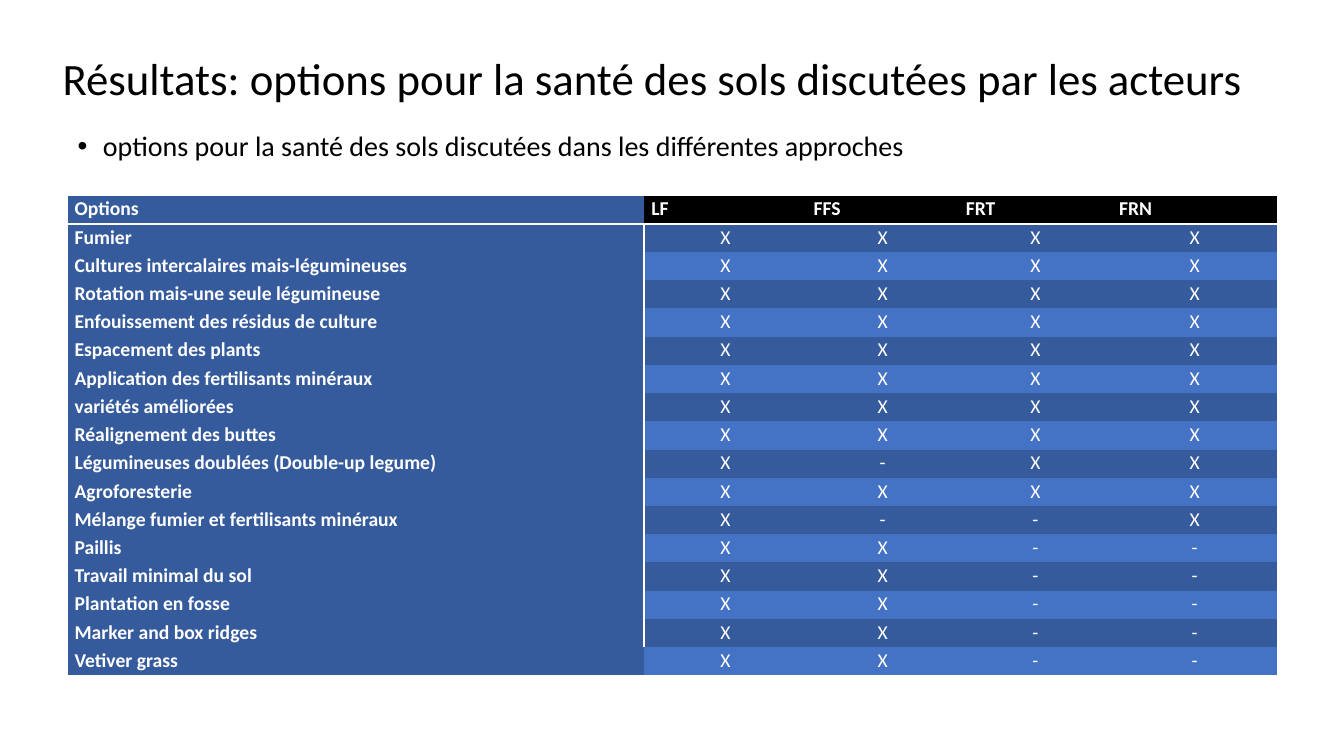
"""Builds the slide on soil health options discussed by the actors."""
from dataclasses import dataclass

from lxml import etree
from pptx import Presentation
from pptx.dml.color import RGBColor
from pptx.enum.text import MSO_ANCHOR, MSO_AUTO_SIZE, PP_ALIGN
from pptx.oxml.ns import qn
from pptx.util import Pt

LEFT, CENTER = PP_ALIGN.LEFT, PP_ALIGN.CENTER
TOP, MIDDLE = MSO_ANCHOR.TOP, MSO_ANCHOR.MIDDLE
NO_AUTOFIT = MSO_AUTO_SIZE.NONE
EMU_PER_PX = 9144
PLAIN_TABLE = "{2D5ABB26-0587-4C30-8999-92F81FD0307C}"

COLUMN_WIDTHS = [572, 161, 151, 152, 164]
ROW_HEIGHT = 28
APPROACHES = ["Options", "LF", "FFS", "FRT", "FRN"]
OPTIONS = [
    ("Fumier", "XXXX"),
    ("Cultures intercalaires mais-légumineuses", "XXXX"),
    ("Rotation mais-une seule légumineuse", "XXXX"),
    ("Enfouissement des résidus de culture", "XXXX"),
    ("Espacement des plants", "XXXX"),
    ("Application des fertilisants minéraux", "XXXX"),
    ("variétés améliorées", "XXXX"),
    ("Réalignement des buttes", "XXXX"),
    ("Légumineuses doublées (Double-up legume)", "X-XX"),
    ("Agroforesterie", "XXXX"),
    ("Mélange fumier et fertilisants minéraux", "X--X"),
    ("Paillis", "XX--"),
    ("Travail minimal du sol", "XX--"),
    ("Plantation en fosse", "XX--"),
    ("Marker and box ridges", "XX--"),
    ("Vetiver grass", "XX--"),
]


@dataclass(frozen=True)
class Theme:
    """Colours and type sizes of the slide."""
    font: str = "Calibri"
    ink: str = "000000"
    paper: str = "FFFFFF"
    dark_band: str = "365B9D"
    light_band: str = "4472C4"
    title_size: int = 32
    list_size: int = 20
    table_size: int = 14
    rule_width: int = 2


def px(length):
    """Turns px into EMU."""
    return length * EMU_PER_PX


def apply(target, values):
    """Sets each named attribute of the target."""
    for name, value in values.items():
        setattr(target, name, value)


class SlideBuilder:
    """Holds the theme and the current slide."""

    def __init__(self, deck, theme):
        self.theme = theme
        self.slide = deck.slides.add_slide(deck.slide_layouts[1])

    def paragraph(self, frame, text, size, color, bold=False, **layout):
        """Fills the first paragraph of a frame and returns it."""
        paragraph = frame.paragraphs[0]
        apply(paragraph, layout)
        run = paragraph.add_run()
        run.text = text
        apply(run.font, {"name": self.theme.font, "size": Pt(size), "bold": bold})
        run.font.color.rgb = RGBColor.from_string(color)
        return paragraph

    def placeholder(self, index, box, text, size, anchor, **layout):
        """Places and fills a template placeholder."""
        holder = self.slide.placeholders[index]
        apply(holder, dict(zip(("left", "top", "width", "height"), map(px, box))))
        apply(holder.text_frame, {"auto_size": NO_AUTOFIT, "word_wrap": True,
                                  "vertical_anchor": anchor})
        return self.paragraph(holder.text_frame, text, size, self.theme.ink,
                              alignment=LEFT, line_spacing=0.9, **layout)

    def title(self, box, text):
        """Fills the title."""
        self.placeholder(0, box, text, self.theme.title_size, MIDDLE)

    def bullet(self, box, text):
        """Fills the body with one bulleted line."""
        point = self.placeholder(1, box, text, self.theme.list_size, TOP,
                                 space_before=Pt(10))
        properties = point._p.get_or_add_pPr()
        properties.set("marL", str(px(25)))
        properties.set("indent", str(px(-25)))
        etree.SubElement(properties, qn("a:buChar"), char="•")

    def border(self, cell, side):
        """Draws a rule on one side of a cell."""
        line = etree.Element(qn(f"a:{side}"), w=str(int(Pt(self.theme.rule_width))))
        fill = etree.SubElement(line, qn("a:solidFill"))
        etree.SubElement(fill, qn("a:srgbClr"), val=self.theme.paper)
        cell._tc.get_or_add_tcPr().insert(0, line)

    def cell(self, cell, text, fill, bold, alignment):
        """Fills one table cell."""
        apply(cell, {"margin_left": px(7), "margin_right": px(7),
                     "margin_top": 0, "margin_bottom": 0, "vertical_anchor": TOP})
        cell.fill.solid()
        cell.fill.fore_color.rgb = RGBColor.from_string(fill)
        self.paragraph(cell.text_frame, text, self.theme.table_size, self.theme.paper,
                       bold, alignment=alignment, line_spacing=1.07, space_after=Pt(8))

    def table(self, left, top, rows):
        """Adds the banded table with a header row and a label column."""
        table = self.slide.shapes.add_table(
            len(rows), len(COLUMN_WIDTHS), px(left), px(top),
            px(sum(COLUMN_WIDTHS)), px(ROW_HEIGHT * len(rows))).table
        apply(table, {"first_row": False, "horz_banding": False})
        table._tbl.tblPr.find(qn("a:tableStyleId")).text = PLAIN_TABLE
        for column, width in zip(table.columns, COLUMN_WIDTHS):
            column.width = px(width)
        bands = (self.theme.light_band, self.theme.dark_band)
        for r, row in enumerate(rows):
            table.rows[r].height = px(ROW_HEIGHT)
            for c, text in enumerate(row):
                header, label = r == 0, c == 0
                if label:
                    fill = self.theme.dark_band
                else:
                    fill = self.theme.ink if header else bands[r % 2]
                cell = table.cell(r, c)
                self.cell(cell, text, fill, header or label,
                          LEFT if header or label else CENTER)
                if header:
                    self.border(cell, "lnB")
                elif label and r < len(rows) - 1:
                    self.border(cell, "lnR")


def main():
    """Builds and saves the deck."""
    deck = Presentation()
    apply(deck, {"slide_width": px(1333), "slide_height": px(750)})
    builder = SlideBuilder(deck, Theme())
    builder.title((52, 34, 1228, 92),
                  "Résultats: options pour la santé des sols discutées par les acteurs")
    builder.bullet((67, 126, 1214, 476),
                   "options pour la santé des sols discutées dans les différentes approches")
    builder.table(67, 194, [APPROACHES] + [[name, *marks] for name, marks in OPTIONS])
    deck.save("out.pptx")


if __name__ == "__main__":
    main()
